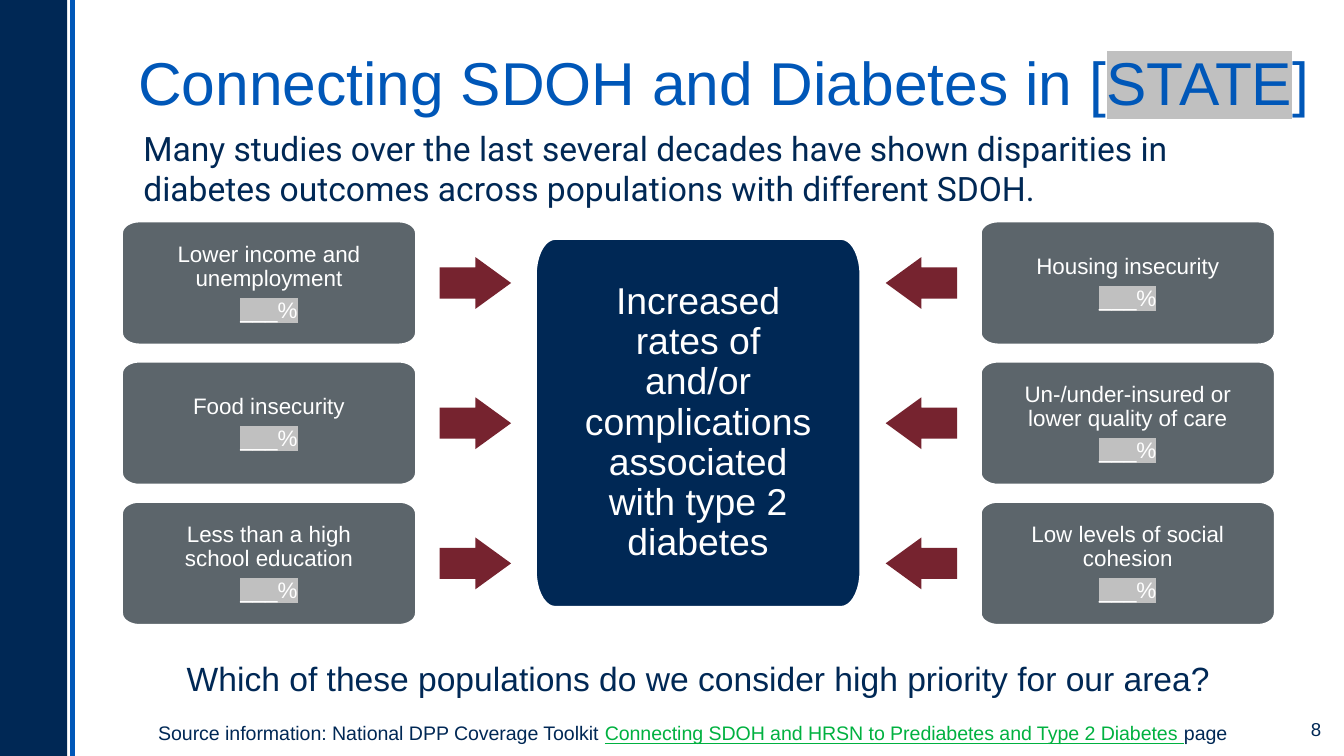
import math
from dataclasses import dataclass

import pptx
import pptx.dml.color
import pptx.enum.shapes
import pptx.enum.text
import pptx.oxml.ns
import pptx.util
from lxml import etree
from pptx.util import Cm, Pt

ALIGN = pptx.enum.text.PP_ALIGN
ANCHOR = pptx.enum.text.MSO_ANCHOR
AUTO_SIZE = pptx.enum.text.MSO_AUTO_SIZE
SHAPE = pptx.enum.shapes.MSO_SHAPE
qn = pptx.oxml.ns.qn


@dataclass(frozen=True)
class Theme:
    navy: str = "002855"
    blue: str = "0057B8"
    gray: str = "5C656B"
    maroon: str = "76232F"
    green: str = "00B140"
    white: str = "FFFFFF"
    highlight: str = "C0C0C0"
    font: str = "Arial"
    intro_font: str = "Roboto"
    title_size: float = 32.4
    outcome_size: float = 20
    body_size: float = 18
    factor_size: float = 12
    source_size: float = 10.5
    number_size: float = 10


THEME = Theme()

SLIDE_WIDTH, SLIDE_HEIGHT = 25.4, 14.29
FACTOR_WIDTH, FACTOR_HEIGHT = 5.59, 2.36
FACTOR_TOP, FACTOR_STEP = 4.17, 2.65
ARROW_WIDTH, ARROW_HEIGHT = 1.35, 0.98

# Each side: factor left, arrow left, arrow shape, factor labels
SIDES = (
    (2.29, 8.31, SHAPE.RIGHT_ARROW,
     ("Lower income and unemployment", "Food insecurity",
      "Less than a high school education")),
    (18.52, 16.74, SHAPE.LEFT_ARROW,
     ("Housing insecurity", "Un-/under-insured or lower quality of care",
      "Low levels of social cohesion")),
)


def rgb(color):
    return pptx.dml.color.RGBColor.from_string(color)


def style_paragraph(paragraph, size, color, font=THEME.font, align=ALIGN.LEFT):
    paragraph.alignment = align
    paragraph.font.size = Pt(size)
    paragraph.font.name = font
    paragraph.font.color.rgb = rgb(color)


def add_run(paragraph, text, highlighted=False):
    run = paragraph.add_run()
    run.text = text
    if highlighted:
        properties = run.font._element
        highlight = etree.SubElement(properties, qn("a:highlight"))
        etree.SubElement(highlight, qn("a:srgbClr"), val=THEME.highlight)
    return run


def fill_shape(shape, color, outlined=False):
    shape.shadow.inherit = False
    shape.fill.solid()
    shape.fill.fore_color.rgb = rgb(color)
    if outlined:
        shape.line.color.rgb = rgb(THEME.white)
        shape.line.width = Pt(2)
    else:
        shape.line.fill.background()


def add_sidebar(slide):
    band = slide.shapes.add_shape(
        SHAPE.RECTANGLE, 0, 0, Cm(1.27), Cm(SLIDE_HEIGHT))
    fill_shape(band, THEME.navy)
    rule = slide.shapes.add_connector(
        pptx.enum.shapes.MSO_CONNECTOR.STRAIGHT,
        Cm(1.37), Cm(SLIDE_HEIGHT), Cm(1.37), 0)
    rule.line.color.rgb = rgb(THEME.blue)
    rule.line.width = Pt(2.25)
    etree.SubElement(rule._element.spPr, qn("a:effectLst"))


def add_title(slide):
    title = slide.shapes.title
    title.left, title.top = Cm(2.36), Cm(0.53)
    title.width, title.height = Cm(22.73), Cm(1.83)
    frame = title.text_frame
    frame.auto_size = AUTO_SIZE.NONE
    frame.vertical_anchor = ANCHOR.BOTTOM
    paragraph = frame.paragraphs[0]
    style_paragraph(paragraph, THEME.title_size, THEME.blue)
    add_run(paragraph, "Connecting SDOH and Diabetes in [")
    add_run(paragraph, "STATE", highlighted=True)
    add_run(paragraph, "]")


def add_text(slide, left, top, width, height, text, size,
             font=THEME.font, align=ALIGN.LEFT, wrap=True):
    """Add a one-paragraph text box and return its paragraph."""
    box = slide.shapes.add_textbox(Cm(left), Cm(top), Cm(width), Cm(height))
    frame = box.text_frame
    frame.word_wrap = wrap
    frame.auto_size = AUTO_SIZE.SHAPE_TO_FIT_TEXT
    paragraph = frame.paragraphs[0]
    style_paragraph(paragraph, size, THEME.navy, font, align)
    add_run(paragraph, text)
    return paragraph


def add_rounded_box(slide, left, top, width, height, radius_x, radius_y, color):
    """Add a box with elliptical corners and return its text frame."""
    corners = (
        (left + width - radius_x, top + radius_y, -90),
        (left + width - radius_x, top + height - radius_y, 0),
        (left + radius_x, top + height - radius_y, 90),
        (left + radius_x, top + radius_y, 180),
    )
    points = []
    for center_x, center_y, start in corners:
        for angle in range(start, start + 91, 10):
            turn = math.radians(angle)
            points.append((Cm(center_x + radius_x * math.cos(turn)),
                           Cm(center_y + radius_y * math.sin(turn))))
    builder = slide.shapes.build_freeform(*points[0])
    builder.add_line_segments(points[1:], close=True)
    box = builder.convert_to_shape()
    fill_shape(box, color, outlined=True)
    frame = box.text_frame
    frame.word_wrap = True
    frame.vertical_anchor = ANCHOR.MIDDLE
    frame.margin_left = frame.margin_right = Cm(0.84)
    frame.margin_top = frame.margin_bottom = 0
    return frame


def write_box_line(paragraph, text, size, highlighted=False):
    style_paragraph(paragraph, size, THEME.white, align=ALIGN.CENTER)
    paragraph.line_spacing = 0.9
    paragraph.space_after = Pt(0.35 * size)
    add_run(paragraph, text, highlighted)


def add_factor(slide, left, top, label):
    frame = add_rounded_box(slide, left, top, FACTOR_WIDTH, FACTOR_HEIGHT,
                            0.34, 0.24, THEME.gray)
    write_box_line(frame.paragraphs[0], label, THEME.factor_size)
    write_box_line(frame.add_paragraph(), "___%", THEME.factor_size,
                   highlighted=True)


def add_arrow(slide, kind, left, factor_top):
    top = factor_top + (FACTOR_HEIGHT - ARROW_HEIGHT) / 2
    arrow = slide.shapes.add_shape(
        kind, Cm(left), Cm(top), Cm(ARROW_WIDTH), Cm(ARROW_HEIGHT))
    arrow.adjustments[0] = 0.6
    arrow.adjustments[1] = ARROW_WIDTH / 2 / ARROW_HEIGHT
    fill_shape(arrow, THEME.maroon)


def add_outcome(slide):
    frame = add_rounded_box(slide, 10.11, 4.5, 6.17, 6.99, 0.38, 0.7, THEME.navy)
    write_box_line(
        frame.paragraphs[0],
        "Increased rates of and/or complications associated with type 2 diabetes",
        THEME.outcome_size)


def add_source(slide):
    paragraph = add_text(
        slide, 2.74, 13.51, 21.16, 0.71,
        "Source information: National DPP Coverage Toolkit ",
        THEME.source_size, wrap=False)
    link = add_run(
        paragraph, "Connecting SDOH and HRSN to Prediabetes and Type 2 Diabetes ")
    link.font.color.rgb = rgb(THEME.green)
    link.font.underline = True
    add_run(paragraph, "page")


def main():
    presentation = pptx.Presentation()
    presentation.slide_width = Cm(SLIDE_WIDTH)
    presentation.slide_height = Cm(SLIDE_HEIGHT)
    slide = presentation.slides.add_slide(presentation.slide_layouts[5])

    add_sidebar(slide)
    add_title(slide)
    for factor_left, arrow_left, arrow_kind, labels in SIDES:
        for row, label in enumerate(labels):
            top = FACTOR_TOP + row * FACTOR_STEP
            add_factor(slide, factor_left, top, label)
            add_arrow(slide, arrow_kind, arrow_left, top)
    add_outcome(slide)
    add_text(slide, 2.46, 2.29, 21.44, 1.8,
             "Many studies over the last several decades have shown disparities "
             "in diabetes outcomes across populations with different SDOH.",
             THEME.body_size, font=THEME.intro_font)
    add_source(slide)
    add_text(slide, 3.28, 12.32, 20.14, 1.02,
             "Which of these populations do we consider high priority for our area?",
             THEME.body_size)
    add_text(slide, 22.86, 13.44, 2.36, 0.68, "8", THEME.number_size,
             align=ALIGN.RIGHT)

    presentation.save("out.pptx")


if __name__ == "__main__":
    main()
